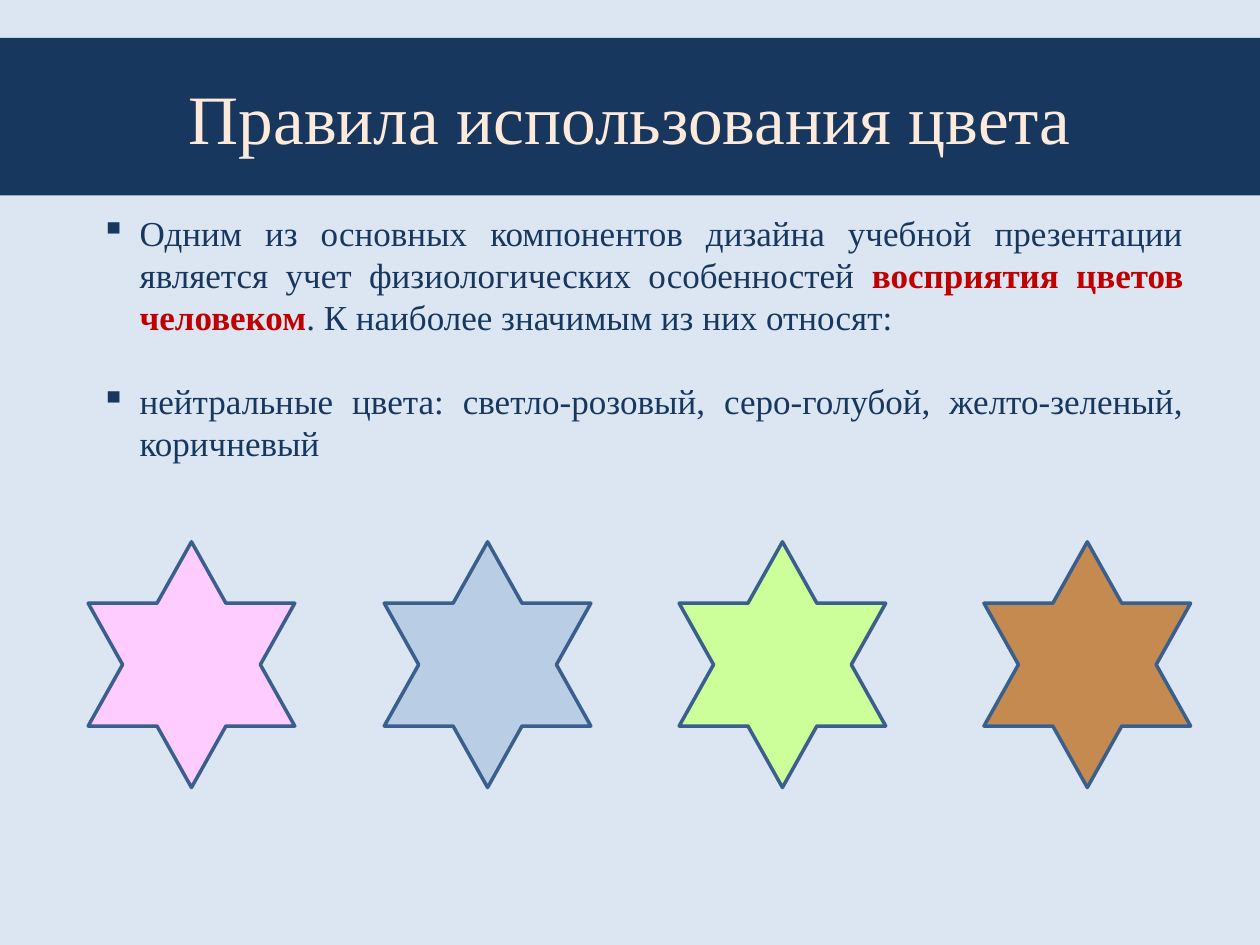
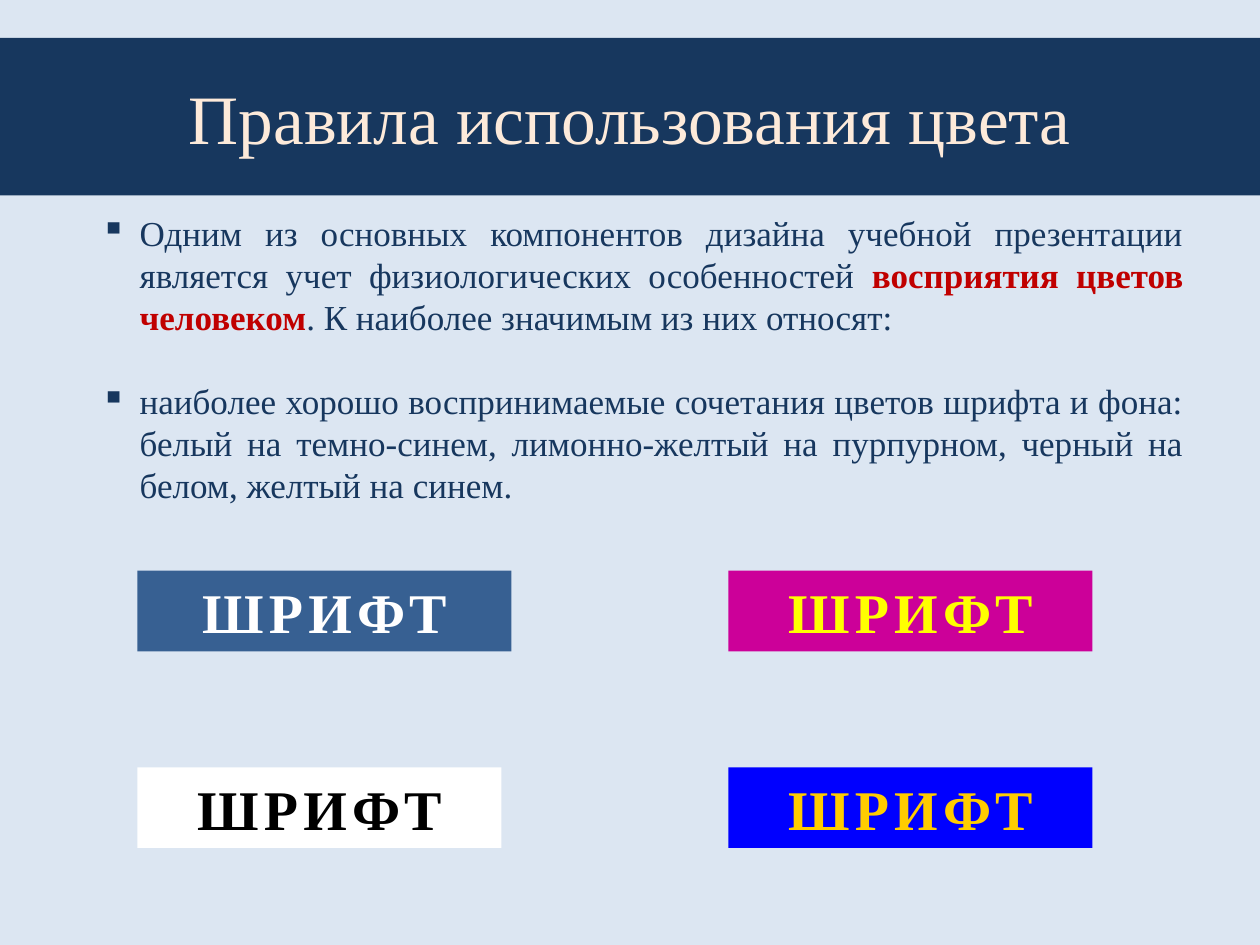
from lxml.etree import SubElement
from pptx import Presentation
from pptx.dml.color import RGBColor
from pptx.enum.shapes import MSO_SHAPE
from pptx.enum.text import MSO_ANCHOR, PP_ALIGN
from pptx.oxml.ns import qn
from pptx.util import Inches, Pt

FONT = "Times New Roman"
BACKGROUND, NAVY, CREAM = "DCE6F2", "17375E", "FDEADA"
ACCENT, OUTLINE = "C00000", "3A5F8C"
COLUMNS, ROWS = 100, 75

TITLE = "Правила использования цвета"
INTRODUCTION = [
    ("Одним из основных компонентов дизайна учебной презентации "
     "является учет физиологических особенностей ", False),
    ("восприятия цветов человеком", True),
    (". К наиболее значимым из них относят:", False),
]
NEUTRAL_COLORS = ("нейтральные цвета: светло-розовый, серо-голубой, "
                  "желто-зеленый, коричневый")
READABLE_PAIRS = ("наиболее хорошо воспринимаемые сочетания цветов шрифта и фона: "
                  "белый на темно-синем, лимонно-желтый на пурпурном, "
                  "черный на белом, желтый на синем.")
# Left column and fill
STARS = [(7, "FFCCFF"), (30.5, "B9CDE5"), (53.9, "CCFF99"), (78.1, "C58A4F")]
# Left column, top row, width, fill, text colour
SAMPLES = [
    (10.9, 45.3, 29.7, "376092", "FFFFFF"),
    (57.8, 45.3, 28.9, "CC0099", "FFFF00"),
    (57.8, 60.9, 28.9, "0000FF", "FFCC00"),
    (10.9, 60.9, 28.9, "FFFFFF", "000000"),
]


def color(value):
    return RGBColor.from_string(value)


class Deck:
    def __init__(self):
        self.presentation = Presentation()
        self.presentation.slide_width = Inches(10)
        self.presentation.slide_height = Inches(7.5)
        self.slide = None

    def place(self, left, top, width, height):
        """Turn grid columns and rows into lengths."""
        column = self.presentation.slide_width / COLUMNS
        row = self.presentation.slide_height / ROWS
        return (round(left * column), round(top * row),
                round(width * column), round(height * row))

    def style(self, font, size, text_color, bold=False):
        font.name, font.size, font.bold = FONT, Pt(size), bold
        font.color.rgb = color(text_color)

    def add_slide(self):
        """Start a slide with the shared background and title band."""
        self.slide = self.presentation.slides.add_slide(self.presentation.slide_layouts[6])
        fill = self.slide.background.fill
        fill.solid()
        fill.fore_color.rgb = color(BACKGROUND)
        self.add_label(self.add_shape(MSO_SHAPE.RECTANGLE, (0, 3, COLUMNS, 12.5), NAVY),
                       TITLE, 39.6, CREAM)

    def add_shape(self, kind, box, fill, outline=None):
        shape = self.slide.shapes.add_shape(kind, *self.place(*box))
        shape.shadow.inherit = False
        shape.fill.solid()
        shape.fill.fore_color.rgb = color(fill)
        if outline:
            shape.line.color.rgb = color(outline)
            shape.line.width = Pt(2)
        else:
            shape.line.fill.background()
        return shape

    def add_label(self, shape, text, size, text_color, bold=False, spacing=0):
        """Centre one line of text in a shape; spacing is in points."""
        frame = shape.text_frame
        frame.vertical_anchor = MSO_ANCHOR.MIDDLE
        paragraph = frame.paragraphs[0]
        paragraph.alignment = PP_ALIGN.CENTER
        run = paragraph.add_run()
        run.text = text
        self.style(paragraph.font, size, text_color, bold)
        if spacing:
            run.font._element.set("spc", str(spacing * 100))

    def add_bullets(self, box, items):
        """Write each item, a list of (text, emphasised) pairs, as a bullet."""
        frame = self.slide.shapes.add_textbox(*self.place(*box)).text_frame
        frame.word_wrap = True
        for index, item in enumerate(items):
            paragraph = frame.add_paragraph() if index else frame.paragraphs[0]
            paragraph.alignment = PP_ALIGN.JUSTIFY
            paragraph.line_spacing = Pt(24)
            paragraph.space_before = Pt(24 if index else 0)
            properties = paragraph._p.get_or_add_pPr()
            properties.set("marL", str(Inches(0.81)))
            properties.set("indent", str(Inches(-0.31)))
            SubElement(properties, qn("a:buChar")).set("char", "▪")
            for text, emphasised in item:
                run = paragraph.add_run()
                run.text = text
                self.style(run.font, 20, ACCENT if emphasised else NAVY, emphasised)

    def add_rule_slide(self, rule, height):
        self.add_slide()
        self.add_bullets((2, 16.3, 92.9, height), [INTRODUCTION, [(rule, False)]])


def main():
    deck = Deck()

    deck.add_rule_slide(NEUTRAL_COLORS, 55.1)
    for left, fill in STARS:
        deck.add_shape(MSO_SHAPE.STAR_6_POINT, (left, 43, 16.4, 19.5), fill, OUTLINE)

    deck.add_rule_slide(READABLE_PAIRS, 25.2)
    for left, top, width, fill, text_color in SAMPLES:
        sample = deck.add_shape(MSO_SHAPE.RECTANGLE, (left, top, width, 6.4), fill)
        deck.add_label(sample, "ШРИФТ", 32, text_color, bold=True, spacing=3)

    deck.presentation.save("out.pptx")


if __name__ == "__main__":
    main()
